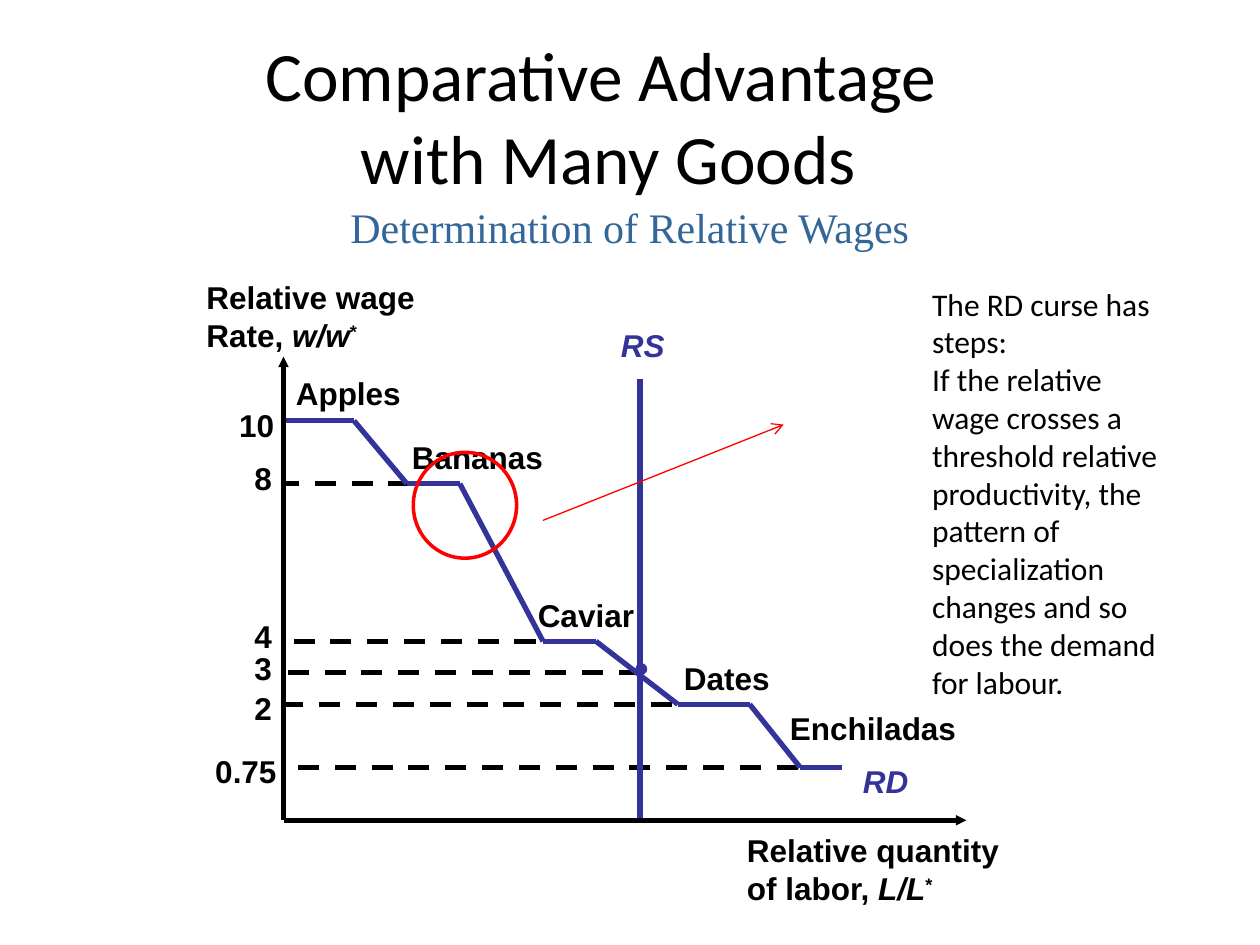
from dataclasses import dataclass

from lxml import etree
from pptx import Presentation
from pptx import util as u
from pptx.dml.color import RGBColor
from pptx.enum import dml, shapes, text
from pptx.oxml.ns import qn


@dataclass(frozen=True)
class Theme:
    """Colours, fonts and sizes used on the slide."""
    ink: str = "000000"
    curve: str = "333399"
    subtitle: str = "336699"
    accent: str = "FF0000"
    label_font: str = "Arial"
    text_font: str = "Calibri"
    subtitle_font: str = "Times New Roman"
    title_size: float = 39.6
    subtitle_size: float = 24
    text_size: float = 18
    thick: float = 3


THEME = Theme()
LABEL = dict(name=THEME.label_font, size=THEME.text_size, color=THEME.ink, bold=True)
CURVE_LABEL = dict(LABEL, color=THEME.curve, italic=True)
BODY = dict(name=THEME.text_font, size=THEME.text_size, color=THEME.ink)
TITLE = dict(BODY, size=THEME.title_size)
SUBTITLE = dict(name=THEME.subtitle_font, size=THEME.subtitle_size, color=THEME.subtitle)
AXIS_ARROW = dict(type="triangle", w="sm", len="sm")
OPEN_ARROW = dict(type="arrow")
FIT = dict(word_wrap=False, auto_size=text.MSO_AUTO_SIZE.SHAPE_TO_FIT_TEXT)

ORIGIN = (2.25, 6.51)
RS_X = 5.08
WAGES = [
    ("10", (1.8, 3.17, 0.48), None),
    ("8", (1.92, 3.59, 0.34), (3.25, 3.84)),
    ("4", (1.92, 4.85, 0.34), (4.25, 5.09)),
    ("3", (1.92, 5.1, 0.34), (RS_X, 5.34)),
    ("2", (1.92, 5.42, 0.34), (5.33, 5.59)),
    ("0.75", (1.61, 5.92, 0.69), (6.33, 6.09)),
]
GOODS = [
    ("Apples", (2.25, 2.92, 1.06)),
    ("Bananas", (3.17, 3.43, 1.24)),
    ("Caviar", (4.17, 4.68, 0.97)),
    ("Dates", (5.33, 5.18, 0.88)),
    ("Enchiladas", (6.17, 5.58, 1.52)),
]
STEPS = [(2.25, 2.81, 3.34), (3.23, 3.65, 3.84), (4.31, 4.73, 5.09),
         (5.38, 5.95, 5.59), (6.35, 6.68, 6.09)]


def inches(values):
    """Turn numbers into lengths."""
    return [u.Inches(value) for value in values]


def format_font(font, values):
    """Set font attributes from a dict."""
    for name, value in values.items():
        if name == "color":
            font.color.rgb = RGBColor.from_string(value)
        else:
            setattr(font, name, u.Pt(value) if name == "size" else value)


def add_span(para, words, style, raised=False):
    """Add a formatted run, raised when it is a superscript."""
    span = para.add_run()
    span.text = words
    format_font(span.font, style)
    if raised:
        span.font._element.set("baseline", "30000")


def add_text(page, place, lines, style, **frame_values):
    """Add a text box with one paragraph a line."""
    frame = page.shapes.add_textbox(*inches(place)).text_frame
    for name, value in frame_values.items():
        setattr(frame, name, value)
    for index, line in enumerate(lines):
        para = frame.add_paragraph() if index else frame.paragraphs[0]
        add_span(para, line, style)
    return frame


def add_label(page, words, place, style=LABEL):
    """Add a single-line label at left, top and width."""
    add_text(page, (*place, 0.4), [words], style, **FIT)


def add_axis_title(page, place, heading, lead, symbol):
    """Add a two-line axis title ending in a starred ratio."""
    frame = add_text(page, place, [heading, lead], LABEL, **FIT)
    add_span(frame.paragraphs[1], symbol, dict(LABEL, italic=True))
    add_span(frame.paragraphs[1], "*", LABEL, raised=True)


def add_line(page, start, end, color, width=THEME.thick, dashed=False, **arrows):
    """Add a straight line with optional dashes and headEnd or tailEnd arrows."""
    line = page.shapes.add_connector(
        shapes.MSO_CONNECTOR.STRAIGHT, *inches((*start, *end)))
    line.line.color.rgb = RGBColor.from_string(color)
    line.line.width = u.Pt(width)
    if dashed:
        line.line.dash_style = dml.MSO_LINE.DASH
    for tag, values in arrows.items():
        etree.SubElement(line.line._get_or_add_ln(), qn(f"a:{tag}"), values)
    etree.SubElement(line._element.spPr, qn("a:effectLst"))


def add_ellipse(page, place, color, width, filled=False):
    """Add an outlined or filled ellipse."""
    ellipse = page.shapes.add_shape(shapes.MSO_SHAPE.OVAL, *inches(place))
    ellipse.shadow.inherit = False
    ellipse.line.color.rgb = RGBColor.from_string(color)
    ellipse.line.width = u.Pt(width)
    if filled:
        ellipse.fill.solid()
        ellipse.fill.fore_color.rgb = RGBColor.from_string(color)
    else:
        ellipse.fill.background()


def add_headings(page):
    """Fill the title placeholder and add the subtitle."""
    title = page.shapes.title
    title.left, title.top, title.width, title.height = inches((0.58, 0.29, 8.5, 1.25))
    frame = title.text_frame
    frame.auto_size = text.MSO_AUTO_SIZE.NONE
    frame.vertical_anchor = text.MSO_ANCHOR.MIDDLE
    para = frame.paragraphs[0]
    para.alignment = text.PP_ALIGN.CENTER
    add_span(para, "Comparative Advantage ", TITLE)
    para.add_line_break()
    line_break = para._p.find(qn("a:br"))
    etree.SubElement(line_break, qn("a:rPr"), sz=str(round(THEME.title_size * 100)))
    add_span(para, "with Many Goods", TITLE)
    subtitle = add_text(page, (0, 1.42, 10, 0.75), ["Determination of Relative Wages"],
                        SUBTITLE, word_wrap=True, vertical_anchor=text.MSO_ANCHOR.MIDDLE)
    subtitle.paragraphs[0].alignment = text.PP_ALIGN.CENTER


def add_demand(page):
    """Draw wage levels, goods and the stepped demand curve."""
    for wage, place, reach in WAGES:
        if reach:
            add_line(page, reach, (ORIGIN[0], reach[1]), THEME.ink, dashed=True)
        add_label(page, wage, place)
    for good, place in GOODS:
        add_label(page, good, place)
    points = [(x, y) for left, right, y in STEPS for x in (left, right)]
    for start, end in zip(points, points[1:]):
        add_line(page, start, end, THEME.curve)
    add_label(page, "RD", (6.75, 6, 0.56), CURVE_LABEL)


def add_supply(page):
    """Draw the supply line and its crossing point."""
    add_line(page, (RS_X, 3.01), (RS_X, ORIGIN[1]), THEME.curve)
    add_ellipse(page, (5.05, 5.27, 0.08, 0.08), THEME.curve, 1, filled=True)
    add_label(page, "RS", (4.83, 2.54, 0.55), CURVE_LABEL)


def add_axes(page):
    """Draw both axes and their titles."""
    add_line(page, (ORIGIN[0], 2.83), ORIGIN, THEME.ink, headEnd=AXIS_ARROW)
    add_line(page, ORIGIN, (7.67, ORIGIN[1]), THEME.ink, tailEnd=AXIS_ARROW)
    add_axis_title(page, (1.54, 2.16, 1.9, 0.7), "Relative wage", "Rate, ", "w/w")
    add_axis_title(page, (5.83, 6.55, 2.2, 0.7), "Relative quantity", "of labor, ", "L/L")


def add_remark(page):
    """Circle a step and explain it."""
    add_ellipse(page, (3.28, 3.59, 0.82, 0.84), THEME.accent, 2)
    add_line(page, (4.31, 4.13), (6.22, 3.37), THEME.accent, 0.75, tailEnd=OPEN_ARROW)
    add_text(page, (7.3, 2.21, 2.1, 4.34), [
        "The RD curse has steps:",
        "If the relative wage crosses a threshold relative productivity, the pattern of "
        "specialization changes and so does the demand for labour.",
    ], BODY, word_wrap=True)


def main():
    """Build and save the slide."""
    deck = Presentation()
    deck.slide_width, deck.slide_height = inches((10, 7.5))
    page = deck.slides.add_slide(deck.slide_layouts[5])
    for add_part in (add_demand, add_headings, add_supply, add_axes, add_remark):
        add_part(page)
    deck.save("out.pptx")


if __name__ == "__main__":
    main()
